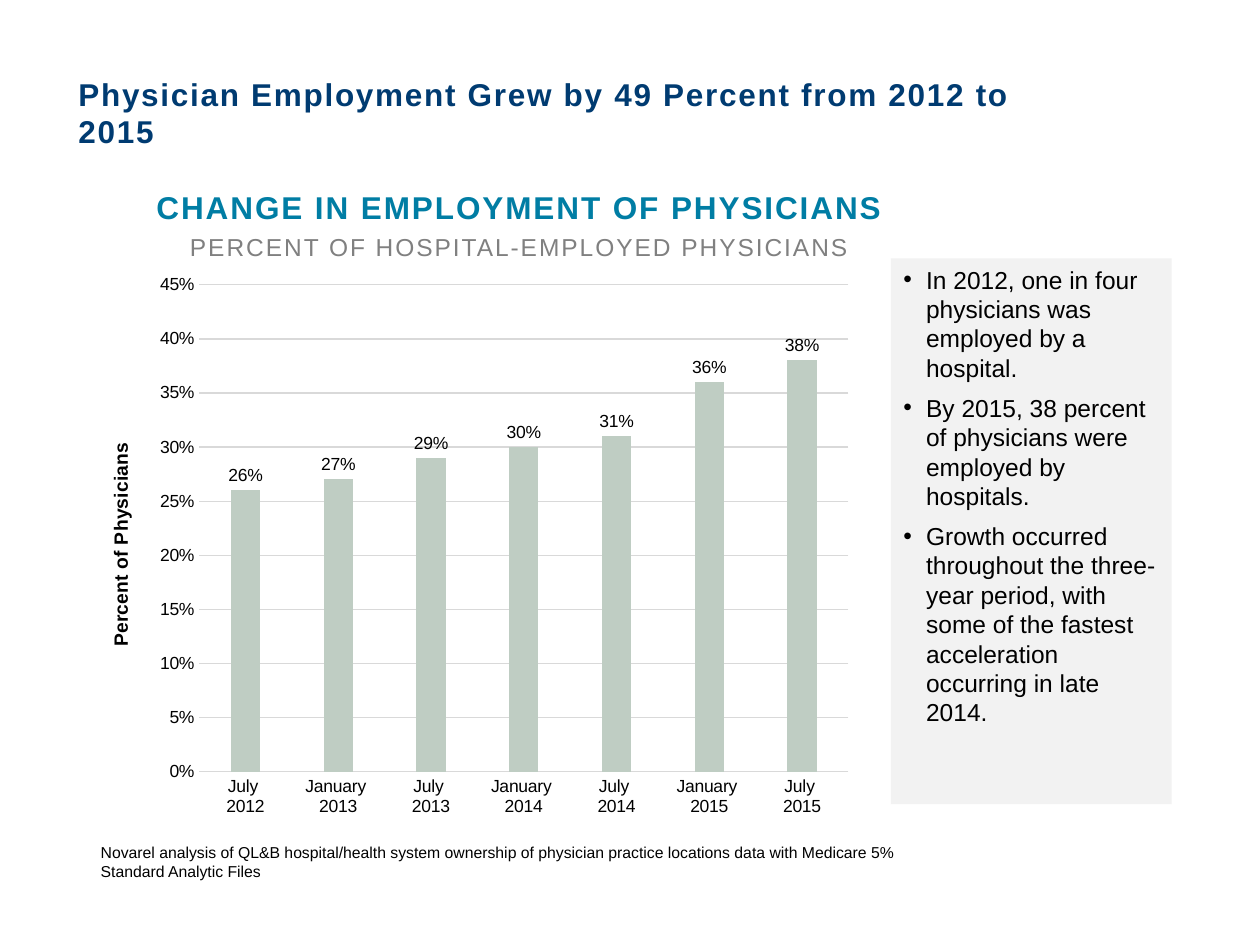
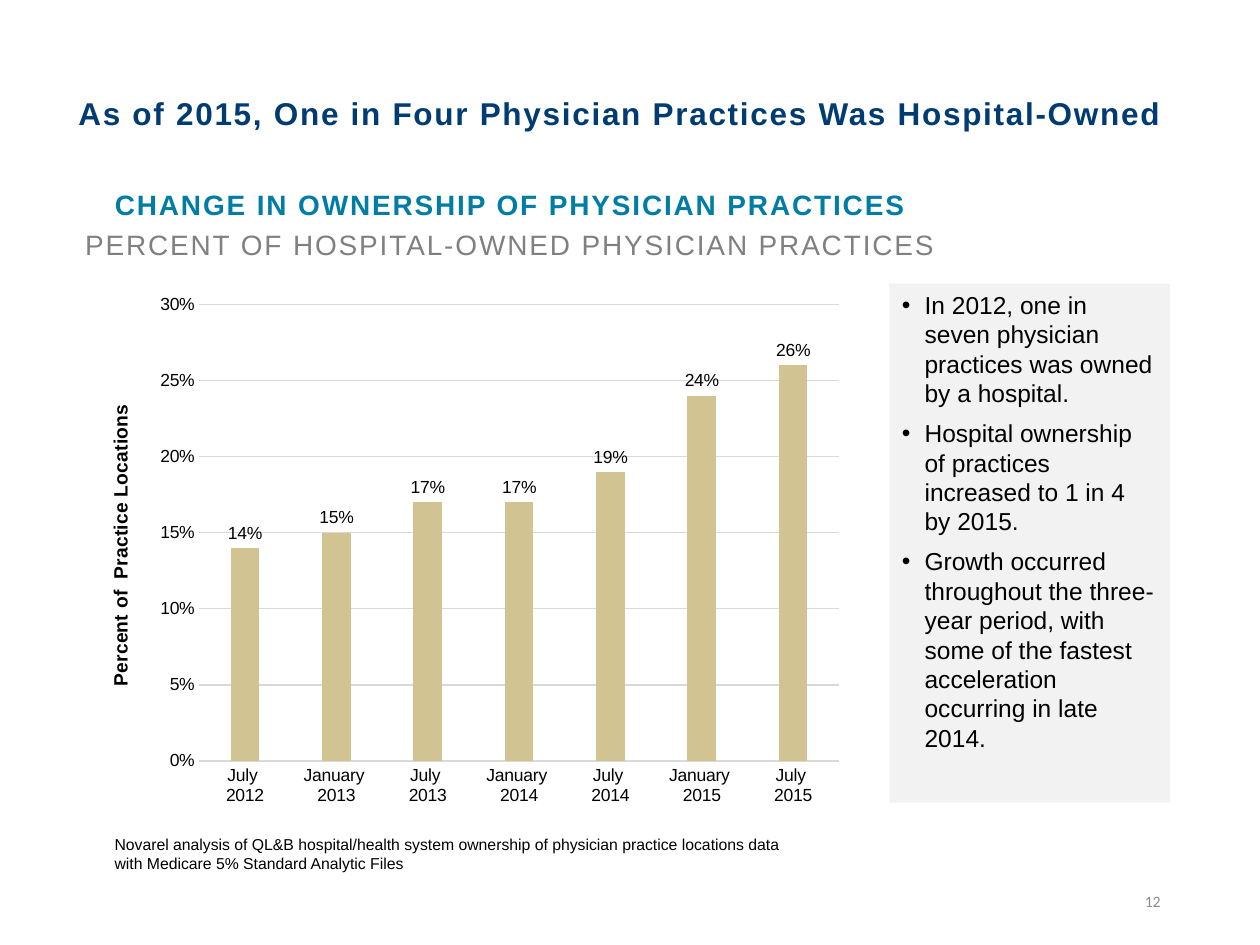
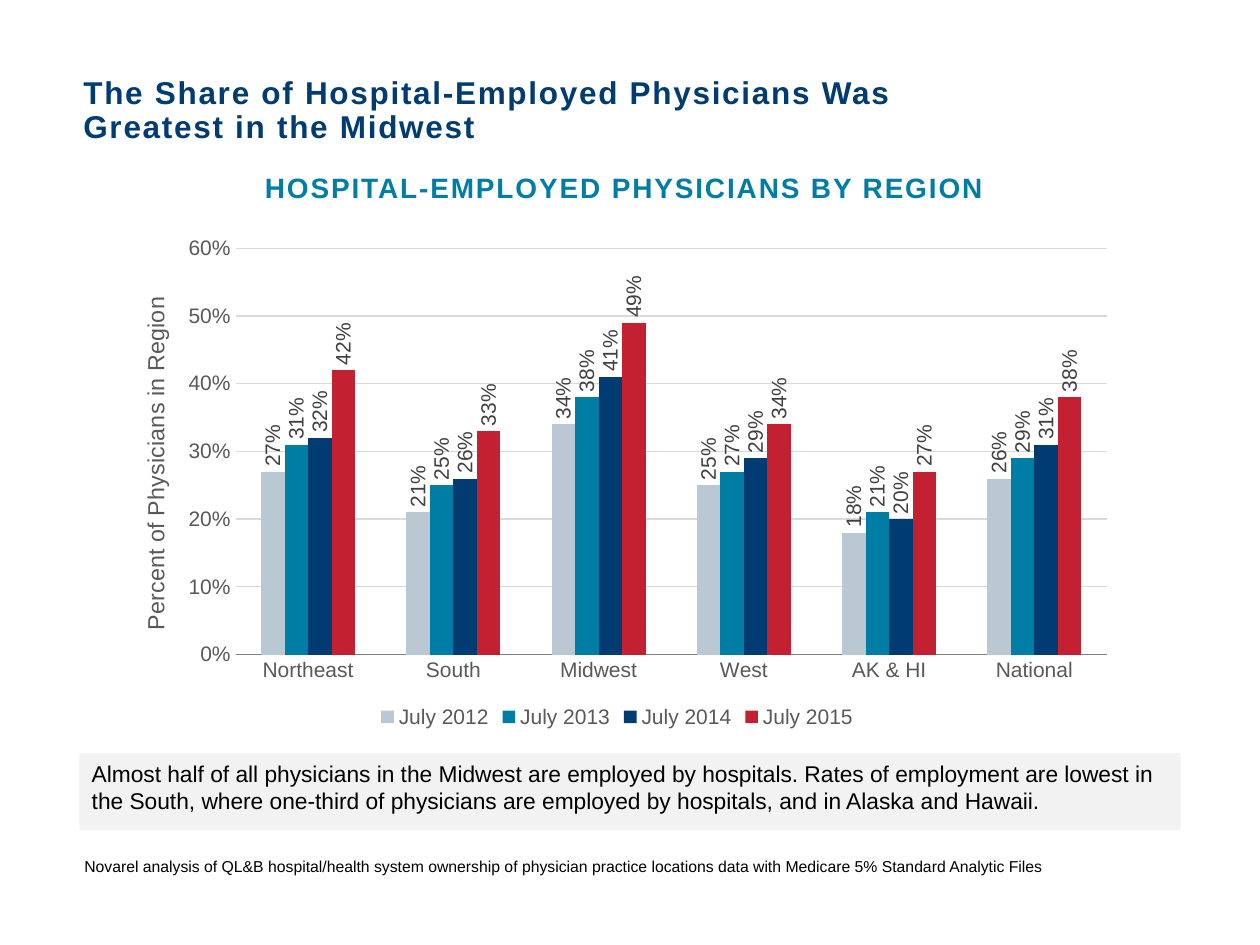
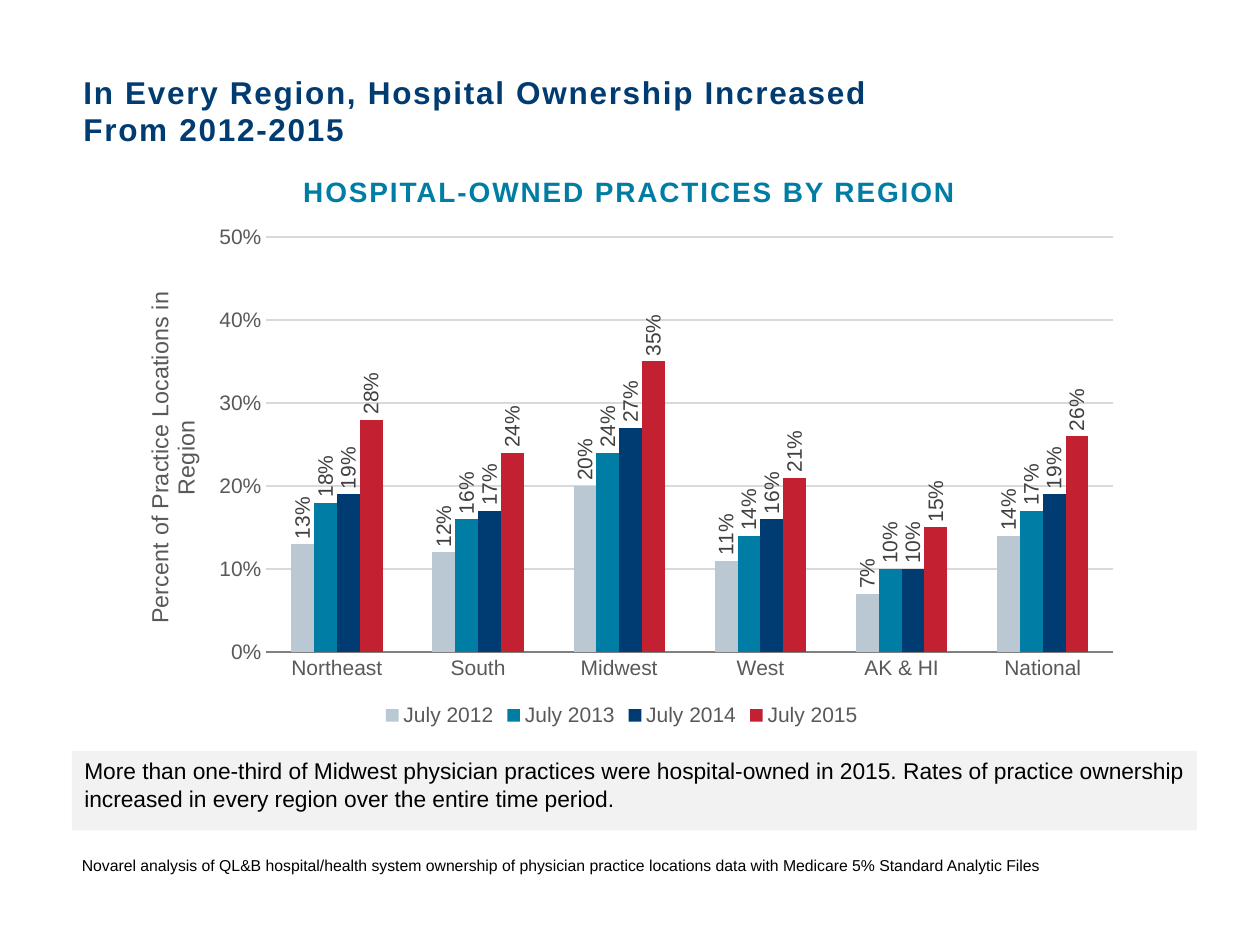
from lxml import etree
from pptx import Presentation
from pptx.chart.data import CategoryChartData
from pptx.dml.color import RGBColor
from pptx.enum.chart import XL_CHART_TYPE, XL_LABEL_POSITION, XL_LEGEND_POSITION, XL_TICK_MARK
from pptx.enum.shapes import MSO_SHAPE
from pptx.enum.text import MSO_ANCHOR, MSO_AUTO_SIZE, PP_ALIGN
from pptx.oxml.ns import qn
from pptx.util import Cm, Pt

COLUMN_CLUSTERED = XL_CHART_TYPE.COLUMN_CLUSTERED
OUTSIDE_END = XL_LABEL_POSITION.OUTSIDE_END
LEGEND_BOTTOM = XL_LEGEND_POSITION.BOTTOM
NO_TICKS = XL_TICK_MARK.NONE
RECTANGLE = MSO_SHAPE.RECTANGLE
TOP, MIDDLE, BOTTOM = MSO_ANCHOR.TOP, MSO_ANCHOR.MIDDLE, MSO_ANCHOR.BOTTOM
NO_AUTOFIT = MSO_AUTO_SIZE.NONE
LEFT, CENTER, RIGHT = PP_ALIGN.LEFT, PP_ALIGN.CENTER, PP_ALIGN.RIGHT

COLORS = {
    "navy": "003B71", "teal": "007DA4", "red": "C32032", "mist": "B9C8D3",
    "sage": "BFCDC3", "sand": "D1C392", "panel": "F2F2F2", "grid": "D9D9D9",
    "axis": "808080", "tick": "595959", "label": "404040", "number": "8C8C8C",
    "black": "000000",
}
SOURCE_NOTE = ("Novarel analysis of QL&B hospital/health system ownership of physician practice "
               "locations data with Medicare 5% Standard Analytic Files")
GROWTH_NOTE = ("Growth occurred throughout the three-year period, with some of the fastest "
               "acceleration occurring in late 2014.")
HALF_YEARS = ["July \n2012", "January \n2013", "July \n2013", "January \n2014",
              "July \n2014", "January \n2015", "July \n2015"]
REGIONS = ["Northeast", "South", "Midwest", "West", "AK & HI", "National"]
YEARS = ["July 2012", "July 2013", "July 2014", "July 2015"]
YEAR_COLORS = ["mist", "teal", "navy", "red"]

TREND_STYLE = {
    "categories": HALF_YEARS, "names": ["Series 1"], "overlap": -27, "major": 0.05,
    "size": 10, "tick": "black", "label": "black", "line": "grid",
    "axis_size": 11, "axis_bold": True, "rotated": False, "legend": False,
    "bullets": True, "note_size": 14,
}
REGION_STYLE = {
    "categories": REGIONS, "names": YEARS, "colors": YEAR_COLORS, "overlap": 0, "major": 0.1,
    "size": 12, "tick": "tick", "label": "label", "line": "axis",
    "axis_size": 13.3, "axis_bold": False, "rotated": True, "legend": True,
    "bullets": False, "note_size": 13, "subtitle": None,
}

SLIDES = [
    {
        **TREND_STYLE,
        "title": "Physician Employment Grew by 49 Percent from 2012 to 2015",
        "title_box": (1.35, 1.4, 20.45, 1.73), "title_line": 1,
        "heading": "CHANGE IN EMPLOYMENT OF PHYSICIANS", "heading_size": 18,
        "subtitle": "PERCENT OF HOSPITAL-EMPLOYED PHYSICIANS", "subtitle_size": 14,
        "heading_box": (1.78, 3.7, 17.37, 1.9), "heading_anchor": TOP,
        "chart_box": (1.78, 5.31, 15.62, 11.4), "plot": (0.143, 0.038, 0.838, 0.861),
        "axis_title": "Percent of Physicians", "axis_place": (0.02, 0.31),
        "maximum": 0.45, "colors": ["sage"],
        "values": [[0.26, 0.27, 0.29, 0.3, 0.31, 0.36, 0.38]],
        "notes": ["In 2012, one in four physicians was employed by a hospital.",
                  "By 2015, 38 percent of physicians were employed by hospitals.",
                  GROWTH_NOTE],
        "note_box": (17.96, 5.21, 5.66, 11), "source_box": (1.78, 16.87, 17.7, 1.6),
    },
    {
        **TREND_STYLE,
        "title": "As of 2015, One in Four Physician Practices Was Hospital-Owned",
        "title_box": (1.35, 1.52, 22.61, 1.24), "title_line": 1,
        "heading": "CHANGE IN OWNERSHIP OF PHYSICIAN PRACTICES", "heading_size": 16,
        "subtitle": "PERCENT OF HOSPITAL-OWNED PHYSICIAN PRACTICES", "subtitle_size": 16,
        "heading_box": (1.35, 3.68, 17.88, 1.9), "heading_anchor": TOP,
        "chart_box": (1.78, 5.72, 15.44, 10.74), "plot": (0.145, 0.039, 0.835, 0.857),
        "axis_title": "Percent of  Practice Locations", "axis_place": (0.02, 0.22),
        "maximum": 0.3, "colors": ["sand"],
        "values": [[0.14, 0.15, 0.17, 0.17, 0.19, 0.24, 0.26]],
        "notes": ["In 2012, one in seven physician practices was owned by a hospital.",
                  "Hospital ownership of practices increased to 1 in 4 by 2015.",
                  GROWTH_NOTE],
        "note_box": (17.93, 5.72, 5.66, 10.46), "source_box": (2.06, 16.71, 14.33, 1.6),
        "number": "12",
    },
    {
        **REGION_STYLE,
        "title": "The Share of Hospital-Employed Physicians Was Greatest in the Midwest",
        "title_box": (1.45, 1.8, 18.31, 1.24), "title_line": 0.9,
        "heading": "HOSPITAL-EMPLOYED PHYSICIANS BY REGION", "heading_size": 16,
        "heading_box": (1.35, 3.2, 22.48, 1.22), "heading_anchor": MIDDLE,
        "chart_box": (2.13, 4.57, 20.62, 10.21), "plot": (0.127, 0.043, 0.852, 0.802),
        "axis_title": "Percent of Physicians in Region", "axis_place": (0.03, 0.13),
        "maximum": 0.6,
        "values": [[0.27, 0.21, 0.34, 0.25, 0.18, 0.26], [0.31, 0.25, 0.38, 0.27, 0.21, 0.29],
                   [0.32, 0.26, 0.41, 0.29, 0.2, 0.31], [0.42, 0.33, 0.49, 0.34, 0.27, 0.38]],
        "notes": ["Almost half of all physicians in the Midwest are employed by hospitals. Rates of "
                  "employment are lowest in the South, where one-third of physicians are employed "
                  "by hospitals, and in Alaska and Hawaii."],
        "note_box": (1.6, 15.19, 22.2, 1.55), "source_box": (1.45, 17.15, 22.96, 1.09),
    },
    {
        **REGION_STYLE,
        "title": "In Every Region, Hospital Ownership Increased From 2012-2015",
        "title_box": (1.45, 1.85, 16.89, 1.24), "title_line": 1,
        "heading": "HOSPITAL-OWNED PRACTICES BY REGION", "heading_size": 16,
        "heading_box": (0.94, 3.5, 23.5, 1.22), "heading_anchor": TOP,
        "chart_box": (2.21, 4.34, 20.65, 10.41), "plot": (0.153, 0.042, 0.827, 0.804),
        "axis_title": "Percent of Practice Locations in Region", "axis_place": (0.03, 0.14),
        "maximum": 0.5,
        "values": [[0.13, 0.12, 0.2, 0.11, 0.07, 0.14], [0.18, 0.16, 0.24, 0.14, 0.1, 0.17],
                   [0.19, 0.17, 0.27, 0.16, 0.1, 0.19], [0.28, 0.24, 0.35, 0.21, 0.15, 0.26]],
        "notes": ["More than one-third of Midwest physician practices were hospital-owned in 2015. "
                  "Rates of practice ownership increased in every region over the entire time "
                  "period."],
        "note_box": (1.45, 15.14, 22.68, 1.6), "source_box": (1.4, 17.12, 22.78, 1.09),
    },
]


def write_text(frame, text, size, color="black", font="Arial", bold=False, align=LEFT,
               anchor=TOP, tracking=0, line=1, before=0, after=0, bullet=False, margins=None):
    frame.word_wrap = True
    frame.auto_size = NO_AUTOFIT
    frame.vertical_anchor = anchor
    if margins:
        frame.margin_left = frame.margin_right = Cm(margins[0])
        frame.margin_top = frame.margin_bottom = Cm(margins[1])
    paragraph = frame.paragraphs[0]
    if paragraph.runs:
        paragraph = frame.add_paragraph()
        paragraph.space_before = Pt(before)
    if bullet:
        properties = paragraph._p.get_or_add_pPr()
        properties.set("marL", str(Cm(0.46)))
        properties.set("indent", str(-Cm(0.46)))
        etree.SubElement(properties, qn("a:buFont")).set("typeface", "Arial")
        etree.SubElement(properties, qn("a:buChar")).set("char", "•")
    paragraph.alignment = align
    paragraph.line_spacing = line
    paragraph.space_after = Pt(after)
    run = paragraph.add_run()
    run.text = text
    run.font.name = font
    run.font.size = Pt(size)
    run.font.bold = bold
    run.font.color.rgb = RGBColor.from_string(COLORS[color])
    if tracking:
        run._r.get_or_add_rPr().set("spc", str(tracking))


def set_layout(element, target, fractions):
    layout = element.find(qn("c:layout"))
    if layout is None:
        layout = etree.Element(qn("c:layout"))
        element.insert(0, layout)
    manual = etree.SubElement(layout, qn("c:manualLayout"))
    settings = [("layoutTarget", target)] if target else []
    settings += [("xMode", "edge"), ("yMode", "edge"), *zip("xywh", fractions)]
    for name, value in settings:
        etree.SubElement(manual, qn("c:" + name)).set("val", str(value))


presentation = Presentation()
presentation.slide_width = Cm(25.4)
presentation.slide_height = Cm(19.05)
title_only = presentation.slide_layouts[5]

for content in SLIDES:
    slide = presentation.slides.add_slide(title_only)

    title = slide.shapes.title
    title.left, title.top, title.width, title.height = map(Cm, content["title_box"])
    write_text(title.text_frame, content["title"], 18, color="navy", bold=True, anchor=BOTTOM,
               tracking=100, line=content["title_line"], margins=(0.23, 0.1))

    chart_data = CategoryChartData(number_format="0%")
    chart_data.categories = content["categories"]
    for name, values in zip(content["names"], content["values"]):
        chart_data.add_series(name, values)
    chart = slide.shapes.add_chart(COLUMN_CLUSTERED, *map(Cm, content["chart_box"]),
                                   chart_data).chart
    chart.has_title = False
    chart.font.name = "Arial"
    chart.font.size = Pt(content["size"])
    chart.font.color.rgb = RGBColor.from_string(COLORS[content["tick"]])
    set_layout(chart._chartSpace.chart.plotArea, "inner", content["plot"])
    chart.has_legend = content["legend"]
    if chart.has_legend:
        chart.legend.position = LEGEND_BOTTOM
        chart.legend.include_in_layout = False

    plot = chart.plots[0]
    plot.gap_width = 219
    plot.overlap = content["overlap"]
    plot.vary_by_categories = False
    for series, color in zip(plot.series, content["colors"]):
        series.format.fill.solid()
        series.format.fill.fore_color.rgb = RGBColor.from_string(COLORS[color])
        labels = series.data_labels
        labels.show_value = True
        labels.number_format = "0%"
        labels.number_format_is_linked = False
        labels.position = OUTSIDE_END
        labels.font.name = "Arial"
        labels.font.size = Pt(content["size"])
        labels.font.color.rgb = RGBColor.from_string(COLORS[content["label"]])
        if content["rotated"]:
            label_body = labels._element.find(".//" + qn("a:bodyPr"))
            label_body.set("rot", "-5400000")
            label_body.set("vert", "horz")

    category_axis, value_axis = chart.category_axis, chart.value_axis
    category_axis.major_tick_mark = value_axis.major_tick_mark = NO_TICKS
    category_axis.format.line.width = Pt(0.75)
    category_axis.format.line.color.rgb = RGBColor.from_string(COLORS[content["line"]])
    value_axis.minimum_scale = 0
    value_axis.maximum_scale = content["maximum"]
    value_axis.major_unit = content["major"]
    value_axis.tick_labels.number_format = "0%"
    value_axis.tick_labels.number_format_is_linked = False
    value_axis.format.line.fill.background()
    value_axis.major_gridlines.format.line.width = Pt(0.75)
    value_axis.major_gridlines.format.line.color.rgb = RGBColor.from_string(COLORS["grid"])

    axis_title = value_axis.axis_title
    set_layout(axis_title._element, None, content["axis_place"])
    write_text(axis_title.text_frame, content["axis_title"], content["axis_size"],
               color=content["tick"], bold=content["axis_bold"], align=CENTER)
    axis_body = axis_title._element.find(".//" + qn("a:bodyPr"))
    axis_body.set("rot", "-5400000")
    axis_body.set("vert", "horz")

    heading = slide.shapes.add_textbox(*map(Cm, content["heading_box"])).text_frame
    write_text(heading, content["heading"], content["heading_size"], color="teal", bold=True,
               align=CENTER, anchor=content["heading_anchor"], tracking=110,
               line=1 if content["subtitle"] else 0.9, margins=(0.23, 0.1))
    if content["subtitle"]:
        write_text(heading, content["subtitle"], content["subtitle_size"], color="axis",
                   align=CENTER, tracking=110, before=3.5)

    panel = slide.shapes.add_shape(RECTANGLE, *map(Cm, content["note_box"]))
    panel.shadow.inherit = False
    panel.fill.solid()
    panel.fill.fore_color.rgb = RGBColor.from_string(COLORS["panel"])
    panel.line.fill.background()
    for note in content["notes"]:
        write_text(panel.text_frame, note, content["note_size"], after=6,
                   bullet=content["bullets"])

    source = slide.shapes.add_textbox(*map(Cm, content["source_box"]))
    write_text(source.text_frame, SOURCE_NOTE, 9)

    if "number" in content:
        number = slide.shapes.add_textbox(Cm(17.93), Cm(17.65), Cm(5.72), Cm(1.02))
        write_text(number.text_frame, content["number"], 9, color="number", font="Calibri",
                   align=RIGHT, anchor=MIDDLE)

presentation.save("out.pptx")
